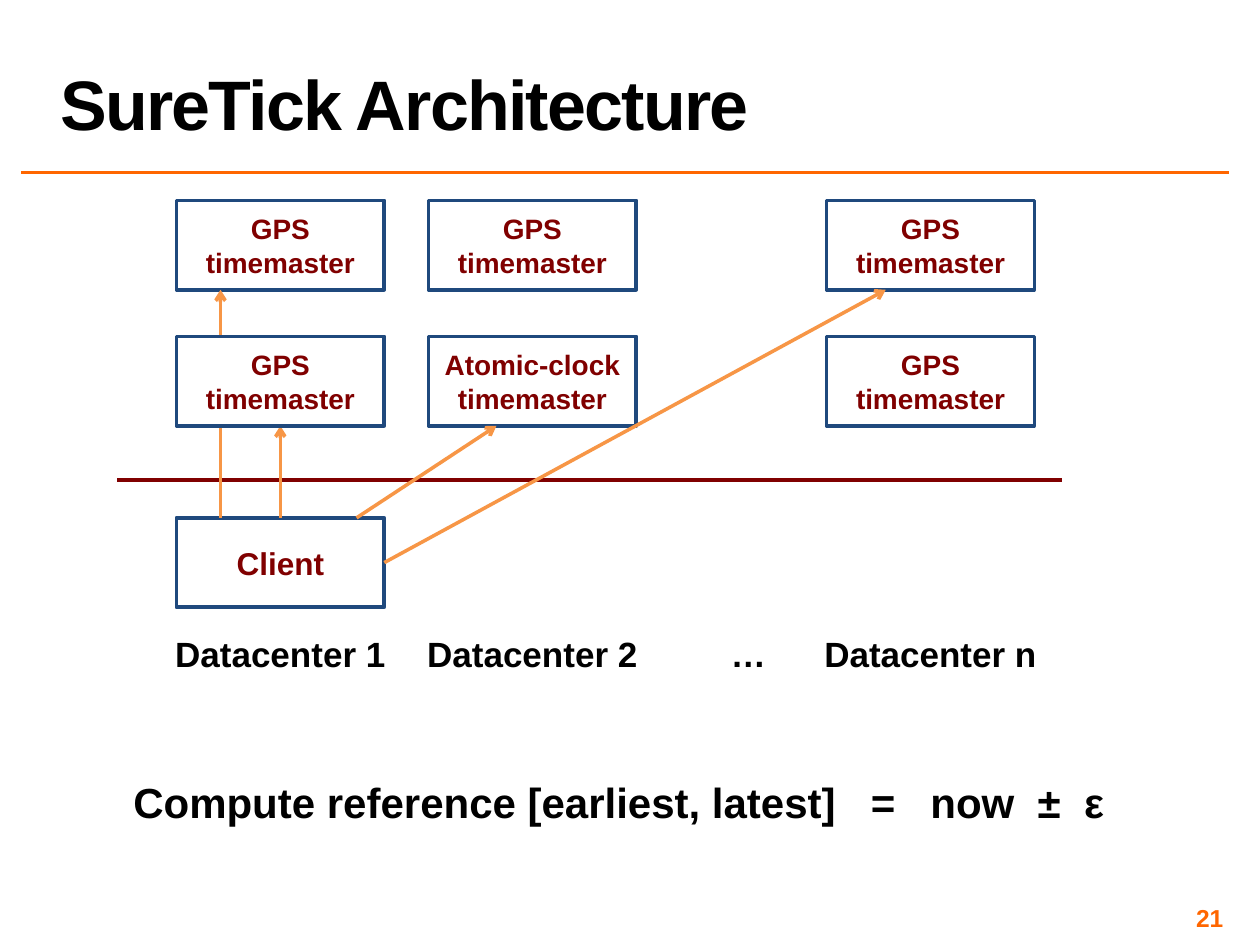
from dataclasses import dataclass

from lxml.etree import SubElement
from pptx import Presentation
from pptx.dml.color import RGBColor as Rgb
from pptx.enum.shapes import MSO_CONNECTOR as Wire, MSO_SHAPE as Form
from pptx.enum.text import MSO_ANCHOR as Anchor, MSO_AUTO_SIZE as Fit, PP_ALIGN as Align
from pptx.oxml.ns import qn
from pptx.util import Inches, Pt

HUES = {
    "ink": "000000",
    "paper": "FFFFFF",
    "orange": "FF6600",
    "navy": "1F497D",
    "maroon": "800000",
    "arrow": "F79646",
}
COLS, ROWS = 100, 75
WIDE, HIGH = Inches(10), Inches(7.5)
BOX_W, BOX_H = 16.5, 7.1
LEFTS = (14, 34, 65.6)
TOPS = (15.9, 26.7, 41.1)
MIDS = [left + BOX_W / 2 for left in LEFTS]
FEET = [top + BOX_H for top in TOPS]
SPACE = 667


@dataclass
class Box:
    text: str
    col: int
    row: int
    size: int = 16


@dataclass
class Label:
    text: str
    mid: float
    width: float


@dataclass
class Line:
    start: tuple[float, float]
    end: tuple[float, float]
    hue: str
    head: bool = False


GPS = "GPS timemaster"
BACK = [
    Box(GPS, 0, 0),
    Box(GPS, 1, 0),
    Box(GPS, 2, 0),
    Box("Atomic-clock timemaster", 1, 1),
    Box(GPS, 2, 1),
    Box("Client", 0, 2, 18),
]
FRONT = Box(GPS, 0, 1)
LABELS = [
    Label("Datacenter 1", MIDS[0], 18.8),
    Label("Datacenter 2", MIDS[1], 18.8),
    Label("…", 59.4, 4.8),
    Label("Datacenter n", MIDS[2], 19),
]
RULE = Line((1.7, 13.7), (97.5, 13.7), "orange")
LINES = [
    Line((9.3, 38.1), (84.3, 38.1), "maroon"),
    Line((28.3, TOPS[2]), (39.4, FEET[1]), "arrow", True),
    Line((LEFTS[0] + BOX_W, TOPS[2] + BOX_H / 2), (70.3, FEET[0]), "arrow", True),
    Line((MIDS[0], TOPS[2]), (MIDS[0], FEET[1]), "arrow", True),
    Line((17.5, TOPS[2]), (17.5, FEET[0]), "arrow", True),
]
TERMS = [
    ("Compute reference [earliest, latest]", 2),
    ("=", 2),
    ("now", 1),
    ("±", 1),
    ("ε", 0),
]


def grid(x: float, y: float) -> tuple[int, int]:
    return round(WIDE * x / COLS), round(HIGH * y / ROWS)


def style(para, size: int, hue: str, align=Align.CENTER) -> None:
    para.alignment = align
    font = para.font
    font.name, font.size, font.bold = "Arial", Pt(size), True
    font.color.rgb = Rgb.from_string(HUES[hue])


def draw_line(slide, line: Line) -> None:
    wire = slide.shapes.add_connector(
        Wire.STRAIGHT, *grid(*line.start), *grid(*line.end))
    wire.line.width = Pt(2)
    wire.line.color.rgb = Rgb.from_string(HUES[line.hue])
    if line.head:
        SubElement(wire.line._get_or_add_ln(), qn("a:tailEnd"), type="arrow")
    SubElement(wire._element.spPr, qn("a:effectLst"))


def draw_box(slide, box: Box) -> None:
    shape = slide.shapes.add_shape(
        Form.RECTANGLE, *grid(LEFTS[box.col], TOPS[box.row]), *grid(BOX_W, BOX_H))
    shape.shadow.inherit = False
    shape.fill.solid()
    shape.fill.fore_color.rgb = Rgb.from_string(HUES["paper"])
    shape.line.color.rgb = Rgb.from_string(HUES["navy"])
    shape.line.width = Pt(2)
    frame = shape.text_frame
    frame.text = box.text
    frame.vertical_anchor = Anchor.MIDDLE
    style(frame.paragraphs[0], box.size, "maroon")


def add_text(slide, x: float, y: float, w: float, h: float):
    frame = slide.shapes.add_textbox(*grid(x, y), *grid(w, h)).text_frame
    frame.word_wrap = False
    return frame


def draw_label(slide, label: Label) -> None:
    frame = add_text(slide, label.mid - label.width / 2, 49.7, label.width, 4.4)
    frame.text = label.text
    frame.auto_size = Fit.SHAPE_TO_FIT_TEXT
    style(frame.paragraphs[0], 20, "ink")


def draw_title(slide) -> None:
    title = slide.shapes.title
    title.left, title.top = grid(3.8, 0.2)
    title.width, title.height = grid(93.7, 11.7)
    frame = title.text_frame
    frame.text = "SureTick Architecture"
    frame.auto_size = Fit.NONE
    frame.vertical_anchor = Anchor.BOTTOM
    para = frame.paragraphs[0]
    para.line_spacing = 0.8
    style(para, 40, "ink", Align.LEFT)
    para.runs[0].font._element.set("spc", "-100")


def draw_sum(slide) -> None:
    frame = add_text(slide, 9.2, 61.1, 79.8, 5)
    frame.auto_size = Fit.SHAPE_TO_FIT_TEXT
    para = frame.paragraphs[0]
    style(para, 24, "ink")
    for text, extra in TERMS:
        para.add_run().text = text
        if extra:
            gap = para.add_run()
            gap.text = " "
            gap.font._element.set("spc", str(SPACE * extra))


def draw_page(slide) -> None:
    frame = add_text(slide, 74.2, 71.7, 23.3, 2.3)
    frame.word_wrap = True
    frame.margin_left = frame.margin_right = Inches(0.04)
    frame.margin_top = frame.margin_bottom = Inches(0.04)
    frame.vertical_anchor = Anchor.MIDDLE
    frame.text = "21"
    style(frame.paragraphs[0], 14, "orange", Align.RIGHT)


def main() -> None:
    deck = Presentation()
    deck.slide_width, deck.slide_height = WIDE, HIGH
    slide = deck.slides.add_slide(deck.slide_layouts[5])
    draw_line(slide, RULE)
    draw_title(slide)
    for label in LABELS:
        draw_label(slide, label)
    for box in BACK:
        draw_box(slide, box)
    for line in LINES:
        draw_line(slide, line)
    draw_box(slide, FRONT)
    draw_page(slide)
    draw_sum(slide)
    deck.save("out.pptx")


if __name__ == "__main__":
    main()
